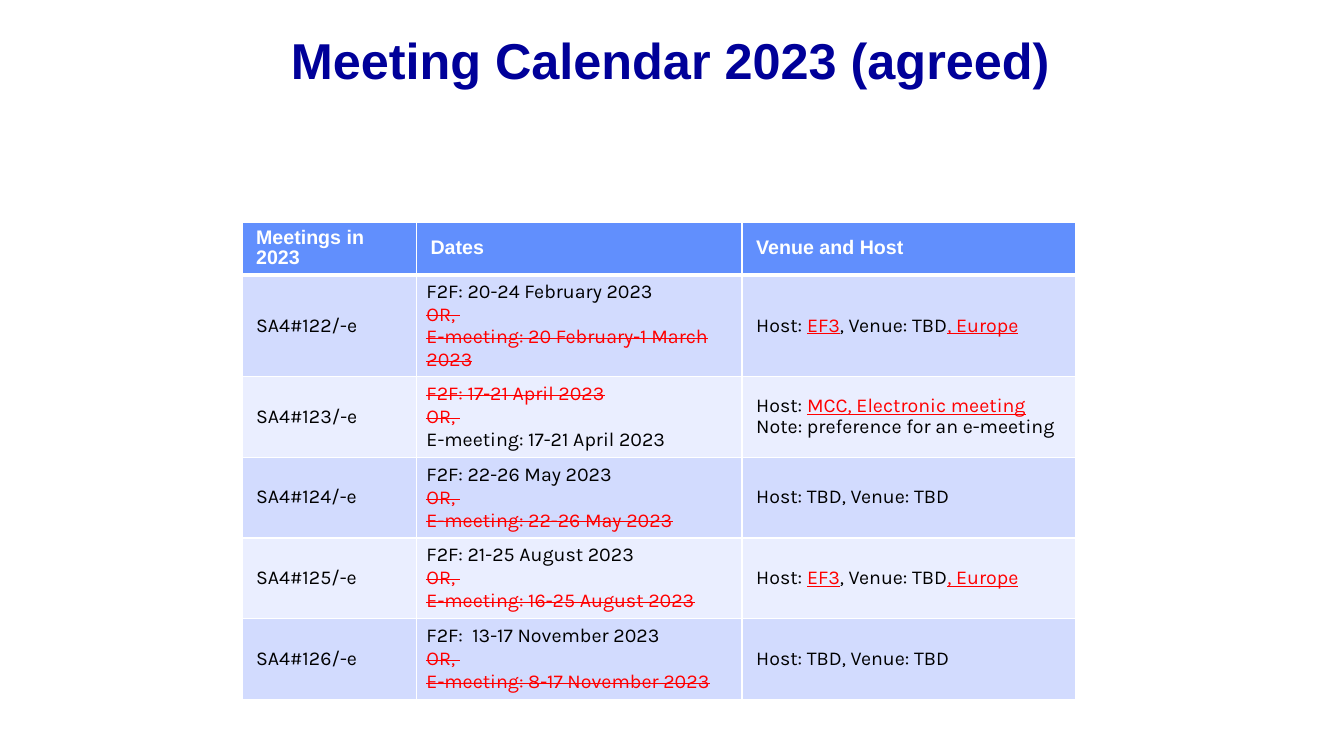
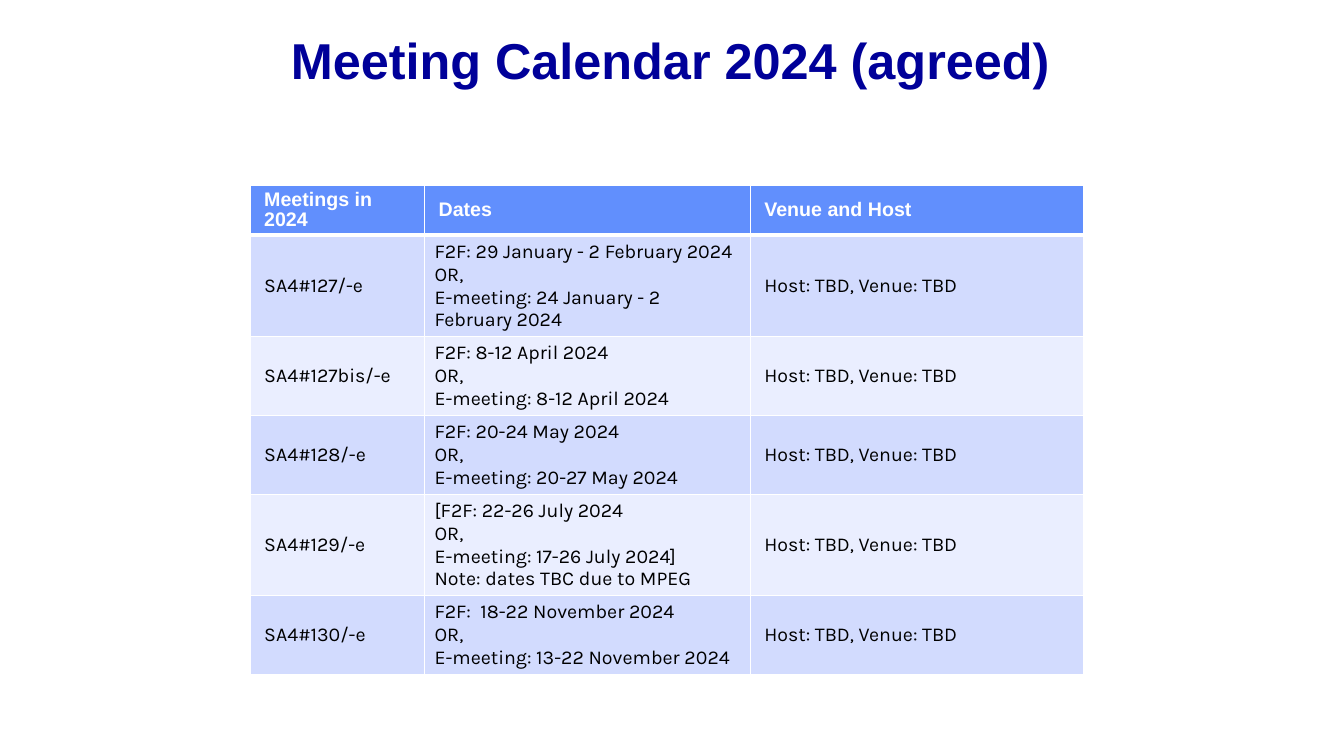
from lxml.etree import SubElement
from pptx import Presentation
from pptx.dml.color import RGBColor
from pptx.enum.text import MSO_ANCHOR, PP_ALIGN
from pptx.oxml.ns import qn
from pptx.util import Inches, Pt

NAVY, HEAD, RED = "000099", "618FFD", "FF0000"
WHITE, BLACK = "FFFFFF", "000000"
BANDS = ("D2DBFE", "EAEEFF")
WIDTHS = (1.73, 3.23, 3.31)


def gone(text):
    return text, "gone"


def new(text):
    return text, "new"


# A cell is a list of lines; a line is one run or a list of runs.
OR = "OR, "
OPEN = ["Host: TBD, Venue: TBD"]
EUROPE = [["Host: ", new("EF3"), ", Venue: TBD", new(", Europe")]]
ONLINE = [["Host: ", new("MCC, Electronic meeting")],
          "Note: preference for an e-meeting"]

YEARS = [
    {"year": 2023, "at": (2.4, 2.21), "heights": (0.52, 0.8, 0.8, 0.8, 0.8, 0.8),
     "meetings": [
        ("SA4#122/-e", ["F2F: 20-24 February 2023", gone(OR),
                        gone("E-meeting: 20 February-1 March 2023")], EUROPE),
        ("SA4#123/-e", [gone("F2F: 17-21 April 2023"), gone(OR),
                        "E-meeting: 17-21 April 2023"], ONLINE),
        ("SA4#124/-e", ["F2F: 22-26 May 2023", gone(OR),
                        gone("E-meeting: 22-26 May 2023")], OPEN),
        ("SA4#125/-e", ["F2F: 21-25 August 2023", gone(OR),
                        gone("E-meeting: 16-25 August 2023")], EUROPE),
        ("SA4#126/-e", ["F2F:  13-17 November 2023", gone(OR),
                        gone("E-meeting: 8-17 November 2023")], OPEN),
     ]},
    {"year": 2024, "at": (2.48, 1.84), "heights": (0.49, 0.98, 0.76, 0.76, 0.98, 0.76),
     "meetings": [
        ("SA4#127/-e", ["F2F: 29 January - 2 February 2024", OR,
                        "E-meeting: 24 January - 2 February 2024"], OPEN),
        ("SA4#127bis/-e", ["F2F: 8-12 April 2024", OR,
                           "E-meeting: 8-12 April 2024"], OPEN),
        ("SA4#128/-e", ["F2F: 20-24 May 2024", OR,
                        "E-meeting: 20-27 May 2024"], OPEN),
        ("SA4#129/-e", ["[F2F: 22-26 July 2024", "OR,",
                        "E-meeting: 17-26 July 2024]",
                        "Note: dates TBC due to MPEG"], OPEN),
        ("SA4#130/-e", ["F2F:  18-22 November 2024", OR,
                        "E-meeting: 13-22 November 2024"], OPEN),
     ]},
]


def rgb(code):
    return RGBColor.from_string(code)


def style(run, size, face, color, bold):
    font = run.font
    font.size, font.name, font.bold = Pt(size), face, bold
    font.color.rgb = rgb(color)


def add_title(slide, text):
    title = slide.shapes.title
    title.left, title.top = Inches(0.62), Inches(0.25)
    title.width, title.height = Inches(12.06), Inches(0.75)
    frame = title.text_frame
    frame.text = text
    frame.vertical_anchor = MSO_ANCHOR.MIDDLE
    para = frame.paragraphs[0]
    para.alignment, para.line_spacing = PP_ALIGN.CENTER, 0.9
    style(para.runs[0], 36, "Arial", NAVY, True)


def set_edges(cell, row):
    props = cell._tc.get_or_add_tcPr()
    thick = {(0, "B"), (1, "T")}
    for side in "LRTB":
        width = 3 if (row, side) in thick else 1
        line = SubElement(props, qn(f"a:ln{side}"), w=str(Pt(width)))
        fill = SubElement(line, qn("a:solidFill"))
        SubElement(fill, qn("a:srgbClr"), val=WHITE)


def fill_cell(cell, lines, row, col):
    head, dates = row == 0, row > 0 and col == 1
    set_edges(cell, row)
    cell.fill.solid()
    cell.fill.fore_color.rgb = rgb(HEAD if head else BANDS[(row - 1) % 2])
    cell.vertical_anchor = MSO_ANCHOR.MIDDLE
    frame = cell.text_frame
    for i, line in enumerate(lines):
        para = frame.add_paragraph() if i else frame.paragraphs[0]
        if not dates:
            para.line_spacing = 0.9
            para.level = int(not head and col == 2)
            props = para._p.get_or_add_pPr()
            props.set("marL", str(Inches(0.04)))
            props.set("indent", "0")
        for part in line if isinstance(line, list) else [line]:
            text, mark = part if isinstance(part, tuple) else (part, None)
            run = para.add_run()
            run.text = text
            color = WHITE if head else RED if mark else BLACK
            style(run, 14, "Arial" if head else "Karla", color, head)
            if mark == "new":
                run.font.underline = True
            elif mark == "gone":
                run.font._element.set("strike", "sngStrike")


def add_calendar(slide, plan):
    heads = ([f"Meetings in {plan['year']}"], ["Dates"], ["Venue and Host"])
    rows = [heads] + [([name], *rest) for name, *rest in plan["meetings"]]
    left, top = plan["at"]
    table = slide.shapes.add_table(
        len(rows), len(WIDTHS), Inches(left), Inches(top),
        Inches(sum(WIDTHS)), Inches(sum(plan["heights"]))).table
    for column, width in zip(table.columns, WIDTHS):
        column.width = Inches(width)
    for r, cells in enumerate(rows):
        table.rows[r].height = Inches(plan["heights"][r])
        for c, lines in enumerate(cells):
            fill_cell(table.cell(r, c), lines, r, c)


def main():
    deck = Presentation()
    deck.slide_width, deck.slide_height = Inches(13.33), Inches(7.5)
    for plan in YEARS:
        slide = deck.slides.add_slide(deck.slide_layouts[5])
        add_title(slide, f"Meeting Calendar {plan['year']} (agreed)")
        add_calendar(slide, plan)
    deck.save("out.pptx")


if __name__ == "__main__":
    main()
